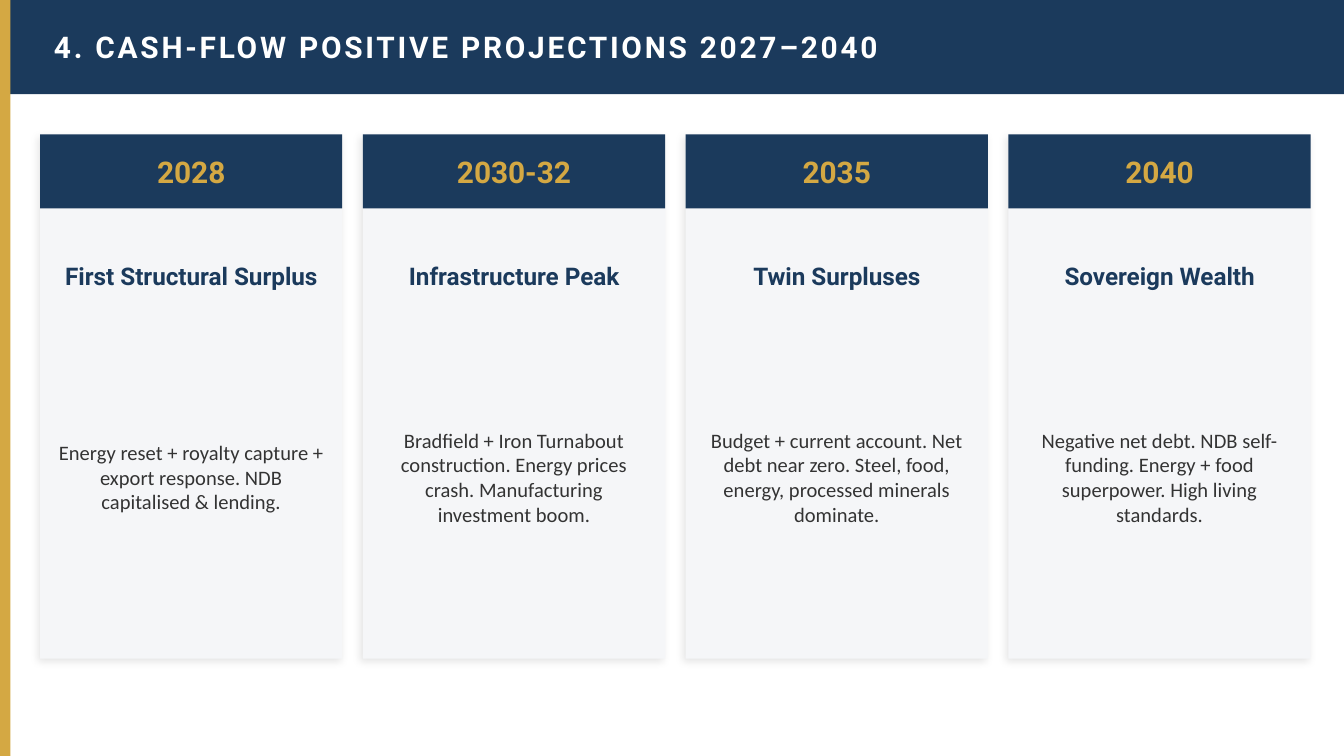
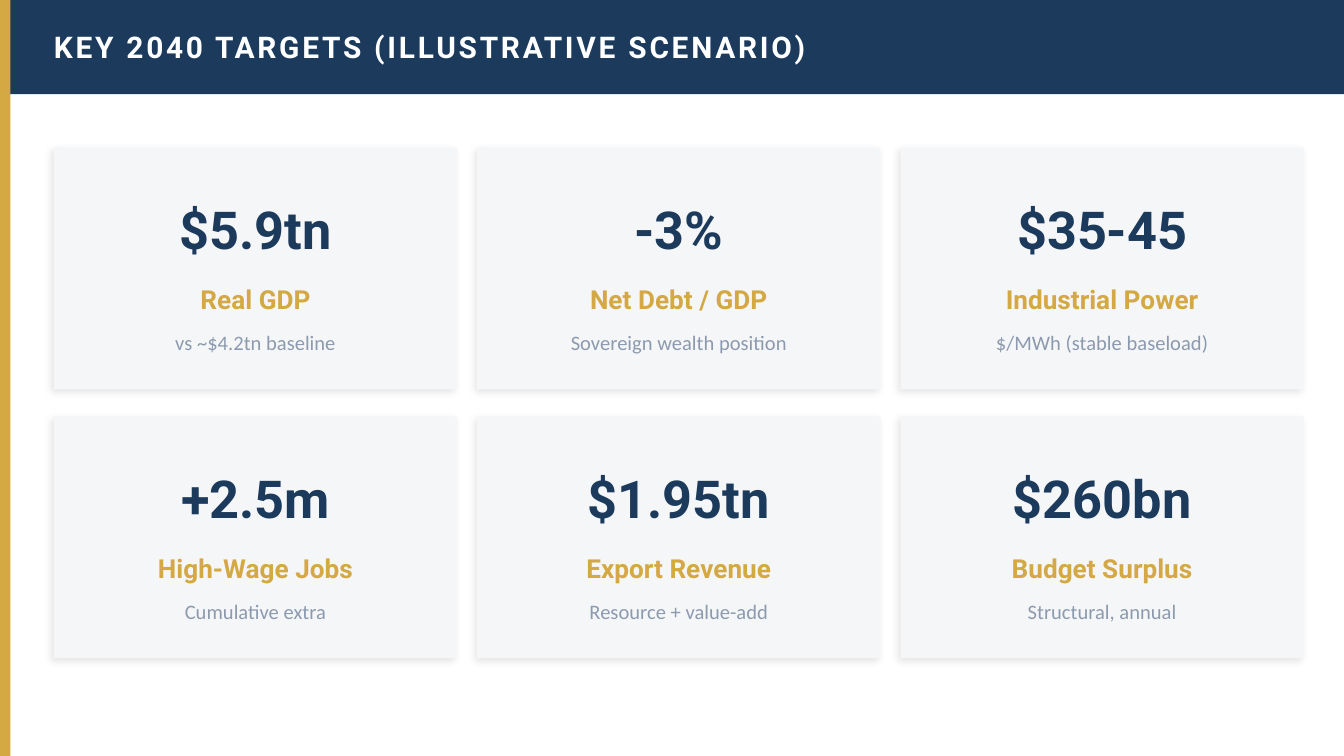
from dataclasses import dataclass

import lxml.etree
import pptx
import pptx.dml.color
import pptx.enum.shapes
import pptx.enum.text
import pptx.oxml.ns
import pptx.presentation
import pptx.shapes.autoshape
import pptx.slide
import pptx.util

NAVY = pptx.dml.color.RGBColor(0x1B, 0x3A, 0x5C)
GOLD = pptx.dml.color.RGBColor(0xD4, 0xA8, 0x43)
PANEL = pptx.dml.color.RGBColor(0xF5, 0xF6, 0xF8)
WHITE = pptx.dml.color.RGBColor(0xFF, 0xFF, 0xFF)
CHARCOAL = pptx.dml.color.RGBColor(0x33, 0x33, 0x33)
SLATE = pptx.dml.color.RGBColor(0x8C, 0x9A, 0xAE)

HEADING_FONT = "Roboto"
BODY_FONT = "Calibri"
PAGE_WIDTH = pptx.util.Cm(25.4)
PAGE_HEIGHT = pptx.util.Cm(14.29)
BAND_HEIGHT = pptx.util.Cm(1.78)
INSET = pptx.util.Cm(0.26)


@dataclass(frozen=True)
class TextStyle:
    size: int
    colour: pptx.dml.color.RGBColor
    font: str = HEADING_FONT
    bold: bool = True
    centred: bool = True
    spacing: float = 0


@dataclass(frozen=True)
class Area:
    left: int
    top: int
    width: int
    height: int


@dataclass(frozen=True)
class Line:
    top: int
    height: int
    inset: int
    style: TextStyle


@dataclass(frozen=True)
class CardGrid:
    first: Area
    columns: int
    column_step: int
    row_step: int
    header_height: int
    lines: tuple[Line, ...]


def area_cm(left: float, top: float, width: float, height: float) -> Area:
    return Area(*(pptx.util.Cm(length) for length in (left, top, width, height)))


def line_cm(top: float, height: float, inset: int, style: TextStyle) -> Line:
    return Line(pptx.util.Cm(top), pptx.util.Cm(height), inset, style)


TITLE_STYLE = TextStyle(16, WHITE, centred=False, spacing=1.5)

MILESTONE_GRID = CardGrid(
    first=area_cm(0.76, 2.54, 5.71, 9.91),
    columns=4,
    column_step=pptx.util.Cm(6.1),
    row_step=0,
    header_height=pptx.util.Cm(1.4),
    lines=(
        line_cm(0.13, 1.14, 0, TextStyle(16, GOLD)),
        line_cm(1.78, 1.78, INSET, TextStyle(13, NAVY)),
        line_cm(3.81, 5.33, INSET, TextStyle(11, CHARCOAL, BODY_FONT, False)),
    ),
)

TARGET_GRID = CardGrid(
    first=area_cm(1.02, 2.79, 7.62, 4.57),
    columns=3,
    column_step=pptx.util.Cm(8),
    row_step=pptx.util.Cm(5.08),
    header_height=0,
    lines=(
        line_cm(0.64, 1.78, 0, TextStyle(28, NAVY)),
        line_cm(2.42, 0.89, INSET, TextStyle(14, GOLD)),
        line_cm(3.3, 0.76, INSET, TextStyle(11, SLATE, BODY_FONT, False)),
    ),
)

MILESTONES = (
    ("2028", "First Structural Surplus",
     "Energy reset + royalty capture + export response. NDB capitalised & lending."),
    ("2030-32", "Infrastructure Peak",
     "Bradfield + Iron Turnabout construction. Energy prices crash. "
     "Manufacturing investment boom."),
    ("2035", "Twin Surpluses",
     "Budget + current account. Net debt near zero. "
     "Steel, food, energy, processed minerals dominate."),
    ("2040", "Sovereign Wealth",
     "Negative net debt. NDB self-funding. Energy + food superpower. "
     "High living standards."),
)

TARGETS = (
    ("$5.9tn", "Real GDP", "vs ~$4.2tn baseline"),
    ("-3%", "Net Debt / GDP", "Sovereign wealth position"),
    ("$35-45", "Industrial Power", "$/MWh (stable baseload)"),
    ("+2.5m", "High-Wage Jobs", "Cumulative extra"),
    ("$1.95tn", "Export Revenue", "Resource + value-add"),
    ("$260bn", "Budget Surplus", "Structural, annual"),
)


def add_panel(
    page: pptx.slide.Slide, area: Area, colour: pptx.dml.color.RGBColor
) -> pptx.shapes.autoshape.Shape:
    panel = page.shapes.add_shape(
        pptx.enum.shapes.MSO_SHAPE.RECTANGLE,
        area.left, area.top, area.width, area.height,
    )
    panel.fill.solid()
    panel.fill.fore_color.rgb = colour
    panel.line.fill.background()
    panel.shadow.inherit = False
    return panel


def add_soft_shadow(panel: pptx.shapes.autoshape.Shape) -> None:
    qn = pptx.oxml.ns.qn
    effects = panel.element.spPr.find(qn("a:effectLst"))
    shadow = lxml.etree.SubElement(
        effects, qn("a:outerShdw"),
        blurRad=str(pptx.util.Pt(4)), dist=str(pptx.util.Pt(2)),
        dir=str(135 * 60000), algn="bl", rotWithShape="0",
    )
    colour = lxml.etree.SubElement(shadow, qn("a:srgbClr"), val="000000")
    lxml.etree.SubElement(colour, qn("a:alpha"), val="10000")


def add_text(page: pptx.slide.Slide, area: Area, text: str, style: TextStyle) -> None:
    box = page.shapes.add_textbox(area.left, area.top, area.width, area.height)
    frame = box.text_frame
    frame.word_wrap = True
    frame.vertical_anchor = pptx.enum.text.MSO_ANCHOR.MIDDLE
    frame.margin_left = frame.margin_right = 0
    frame.margin_top = frame.margin_bottom = 0
    para = frame.paragraphs[0]
    span = para.add_run()
    span.text = text
    if style.centred:
        para.alignment = pptx.enum.text.PP_ALIGN.CENTER
    para.font.name = style.font
    para.font.size = pptx.util.Pt(style.size)
    para.font.bold = style.bold
    para.font.color.rgb = style.colour
    if style.spacing:
        span.font._element.set("spc", str(round(style.spacing * 100)))


def add_page(deck: pptx.presentation.Presentation, title: str) -> pptx.slide.Slide:
    page = deck.slides.add_slide(deck.slide_layouts[6])
    add_panel(page, Area(0, 0, PAGE_WIDTH, BAND_HEIGHT), NAVY)
    add_text(page, area_cm(1.02, 0, 23.37, 1.78), title, TITLE_STYLE)
    add_panel(page, Area(0, 0, pptx.util.Cm(0.2), PAGE_HEIGHT), GOLD)
    return page


def add_card(
    page: pptx.slide.Slide, area: Area, grid: CardGrid, texts: tuple[str, ...]
) -> None:
    add_soft_shadow(add_panel(page, area, PANEL))
    if grid.header_height:
        header = Area(area.left, area.top, area.width, grid.header_height)
        add_panel(page, header, NAVY)
    for line, text in zip(grid.lines, texts):
        line_area = Area(
            area.left + line.inset, area.top + line.top,
            area.width - 2 * line.inset, line.height,
        )
        add_text(page, line_area, text, line.style)


def add_cards(
    page: pptx.slide.Slide, grid: CardGrid, cards: tuple[tuple[str, ...], ...]
) -> None:
    first = grid.first
    for index, texts in enumerate(cards):
        row, column = divmod(index, grid.columns)
        area = Area(
            first.left + column * grid.column_step, first.top + row * grid.row_step,
            first.width, first.height,
        )
        add_card(page, area, grid, texts)


def main() -> None:
    deck = pptx.Presentation()
    deck.slide_width = PAGE_WIDTH
    deck.slide_height = PAGE_HEIGHT
    projections = add_page(deck, "4. CASH-FLOW POSITIVE PROJECTIONS 2027–2040")
    add_cards(projections, MILESTONE_GRID, MILESTONES)
    targets = add_page(deck, "KEY 2040 TARGETS (ILLUSTRATIVE SCENARIO)")
    add_cards(targets, TARGET_GRID, TARGETS)
    deck.save("out.pptx")


if __name__ == "__main__":
    main()
